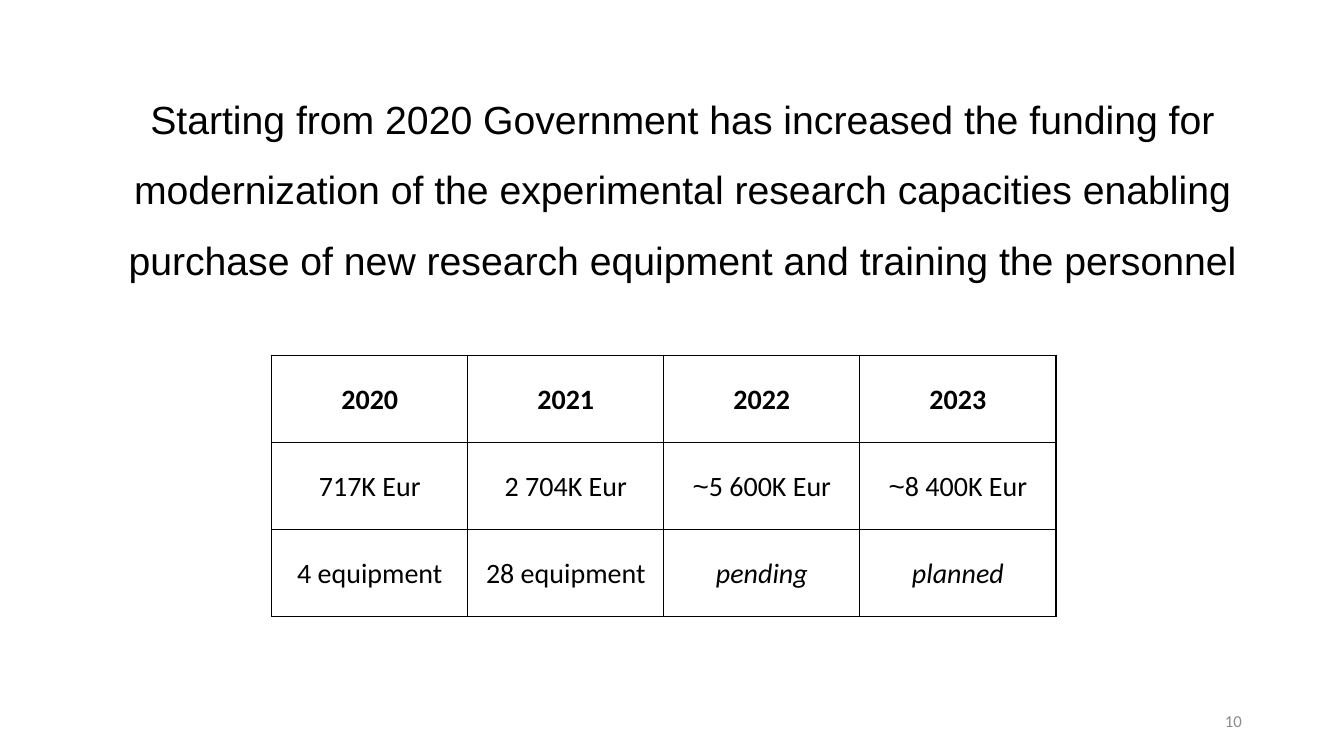
import pptx
import pptx.util
import pptx.dml.color
import pptx.enum.text
import pptx.oxml
import pptx.oxml.ns

Cm = pptx.util.Cm
Pt = pptx.util.Pt
RGBColor = pptx.dml.color.RGBColor
ALIGN = pptx.enum.text.PP_ALIGN
ANCHOR = pptx.enum.text.MSO_ANCHOR

BLACK = RGBColor(0x00, 0x00, 0x00)
GRAY = RGBColor(0x8C, 0x8C, 0x8C)

FUNDING = [
    ["2020", "2021", "2022", "2023"],
    ["717K Eur", "2 704K Eur", "~5 600K Eur", "~8 400K Eur"],
    ["4 equipment", "28 equipment", "pending", "planned"],
]


def add_run(p, text, font="Calibri", size=20, color=BLACK, bold=False, italic=False):
    r = p.add_run()
    r.text = text
    r.font.name = font
    r.font.size = Pt(size)
    r.font.color.rgb = color
    r.font.bold = bold
    r.font.italic = italic


class Deck:
    line_width = Pt(1)
    line_color = BLACK
    cell_margin = Cm(0.18)

    def __init__(self):
        self.prs = pptx.Presentation()
        self.prs.slide_width = Cm(33.87)
        self.prs.slide_height = Cm(19.05)
        self.s = self.prs.slides.add_slide(self.prs.slide_layouts[6])

    def text(self, text, left, top, width, height, align, anchor=ANCHOR.TOP,
             spacing=1.0, indent=0, **fmt):
        sp = self.s.shapes.add_textbox(Cm(left), Cm(top), Cm(width), Cm(height))
        tf = sp.text_frame
        tf.word_wrap = True
        tf.vertical_anchor = anchor
        p = tf.paragraphs[0]
        p.alignment = align
        p.line_spacing = spacing
        if indent:
            p._p.get_or_add_pPr().set("marL", str(Cm(indent)))
        add_run(p, text, **fmt)

    def border(self, cell):
        tc_pr = cell._tc.get_or_add_tcPr()
        for i, side in enumerate(("lnL", "lnR", "lnT", "lnB")):
            tc_pr.insert(i, pptx.oxml.parse_xml(
                f'<a:{side} {pptx.oxml.ns.nsdecls("a")} w="{self.line_width}">'
                f'<a:solidFill><a:srgbClr val="{self.line_color}"/></a:solidFill>'
                f'</a:{side}>'))

    def table(self, rows, left, top, width, height):
        frame = self.s.shapes.add_table(len(rows), len(rows[0]), Cm(left), Cm(top),
                                        Cm(width), Cm(height))
        table = frame.table
        table.first_row = False
        table.horz_banding = False
        for i, row in enumerate(rows):
            for j, text in enumerate(row):
                cell = table.cell(i, j)
                cell.fill.background()
                cell.vertical_anchor = ANCHOR.MIDDLE
                cell.margin_left = cell.margin_right = self.cell_margin
                cell.margin_top = cell.margin_bottom = 0
                p = cell.text_frame.paragraphs[0]
                p.alignment = ALIGN.CENTER
                p.line_spacing = 1.07
                if text.startswith("~"):
                    add_run(p, "~", font="Arial")
                add_run(p, text.lstrip("~"), bold=i == 0,
                        italic=text in ("pending", "planned"))
                self.border(cell)


def main():
    deck = Deck()
    deck.text("Starting from 2020 Government has increased the funding for "
              "modernization of the experimental research capacities enabling "
              "purchase of new research equipment and training the personnel",
              1.85, 1.68, 29.95, 5.64, ALIGN.CENTER, spacing=1.5, indent=0.74,
              font="Arial", size=28)
    deck.table(FUNDING, 6.85, 8.95, 19.76, 6.58)
    deck.text("10", 23.93, 17.65, 7.62, 1.02, ALIGN.RIGHT, anchor=ANCHOR.MIDDLE,
              size=12, color=GRAY)
    deck.prs.save("out.pptx")


if __name__ == "__main__":
    main()
